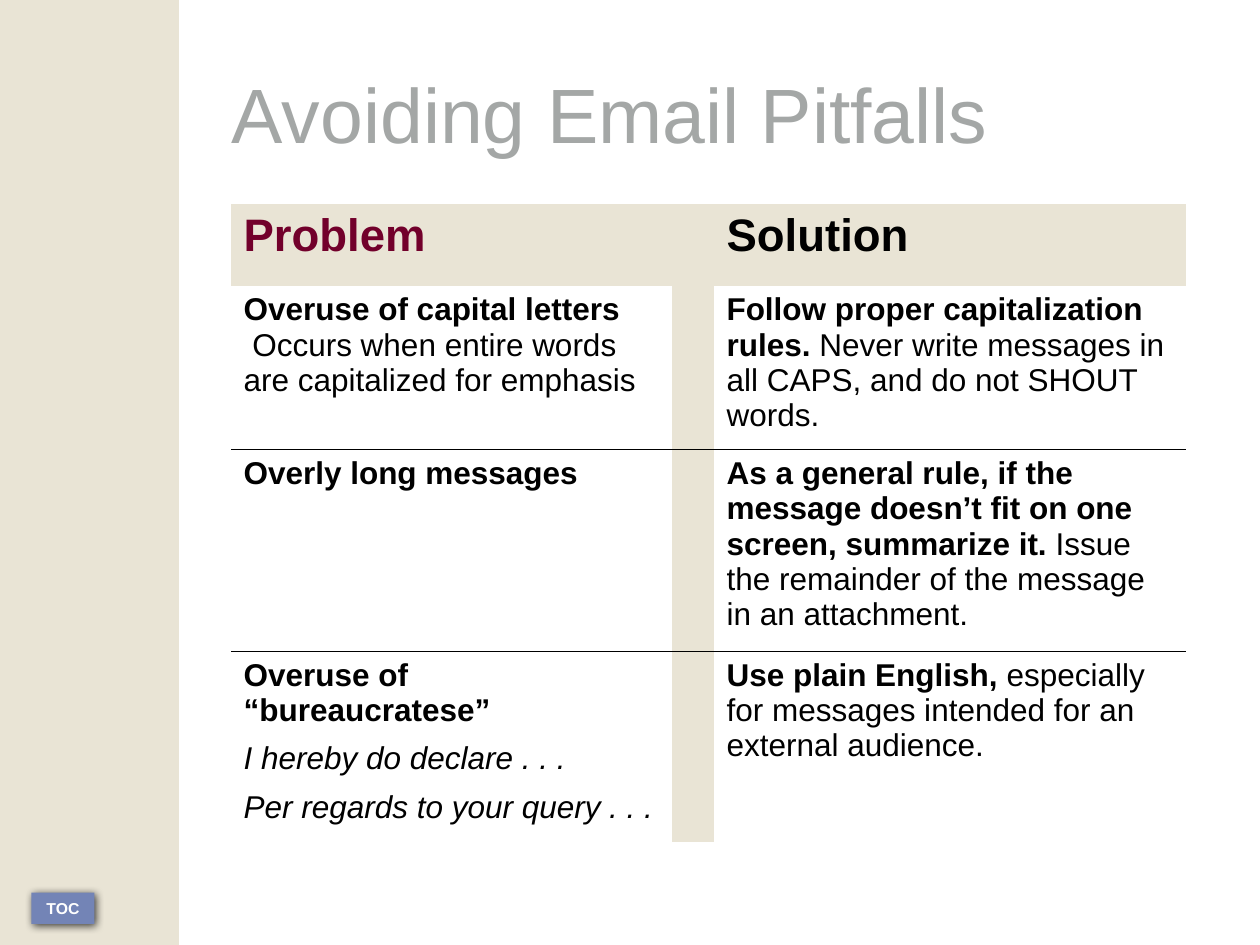
import pptx
import pptx.dml.color
import pptx.enum.shapes
import pptx.enum.text
import pptx.oxml
import pptx.oxml.ns
import pptx.util

Pt = pptx.util.Pt

# Content: a cell is a list of paragraphs, a paragraph a list of (text, style) pieces
TITLE = "Avoiding Email Pitfalls"
BUTTON = "TOC"
HEADINGS = [("Problem", "accent"), ("Solution", "text")]
ROWS = [
    ([[("Overuse of capital letters", "bold"),
       ("\n Occurs when entire words are capitalized for emphasis", "plain")]],
     [[("Follow proper capitalization rules. ", "bold"),
       ("Never write messages in all CAPS, and do not SHOUT words.", "plain")]]),
    ([[("Overly long messages", "bold")]],
     [[("As a general rule, if the message doesn’t fit on one screen, summarize it. ", "bold"),
       ("Issue the remainder of the message in an attachment.", "plain")]]),
    ([[("Overuse of “bureaucratese”", "bold")],
      [("I hereby do declare . . .", "italic")],
      [("Per regards to your query . . .", "italic")]],
     [[("Use plain English, ", "bold"),
       ("especially for messages intended for an external audience.", "plain")]]),
]

THEME = {
    "font": "Arial",
    "colors": {"sand": "E9E4D5", "button": "7384B6", "white": "FFFFFF",
               "title": "A4A7A6", "accent": "72002B", "text": "000000"},
    "sizes": {"title": 44, "heading": 26, "body": 18, "button": 9},
}

# Layout in points
SLIDE_WIDTH, SLIDE_HEIGHT = 720, 540
SIDEBAR_WIDTH = 102.2
TITLE_BOX = (132.5, 48.2, 546, 90)
BUTTON_BOX = (18, 510, 36, 18)
TABLE_LEFT, TABLE_TOP = 132, 116.6
COLUMN_WIDTHS = (252, 24, 270)
ROW_HEIGHTS = (46.8, 93.6, 115.2, 108.8)
SPACE_BEFORE = 7.5


def color(name):
    return pptx.dml.color.RGBColor.from_string(THEME["colors"][name])


def style_run(run, size, color_name, bold=False, italic=False):
    font = run.font
    font.name = THEME["font"]
    font.size = Pt(THEME["sizes"][size])
    font.color.rgb = color(color_name)
    font.bold = bold
    font.italic = italic


def add_rectangle(slide, box, fill):
    shape = slide.shapes.add_shape(
        pptx.enum.shapes.MSO_SHAPE.RECTANGLE, *(Pt(length) for length in box))
    shape.shadow.inherit = False
    shape.fill.solid()
    shape.fill.fore_color.rgb = color(fill)
    shape.line.fill.background()
    return shape


def add_button(slide):
    button = add_rectangle(slide, BUTTON_BOX, "button")
    effects = button._element.spPr.find(pptx.oxml.ns.qn("a:effectLst"))
    effects.append(pptx.oxml.parse_xml(
        f'<a:outerShdw {pptx.oxml.ns.nsdecls("a")} blurRad="{Pt(5)}" dist="{Pt(1.4)}" '
        'dir="2700000" algn="tl" rotWithShape="0"><a:srgbClr val="000000">'
        '<a:alpha val="75000"/></a:srgbClr></a:outerShdw>'))
    frame = button.text_frame
    frame.text = BUTTON
    frame.word_wrap = False
    frame.vertical_anchor = pptx.enum.text.MSO_ANCHOR.MIDDLE
    frame.paragraphs[0].alignment = pptx.enum.text.PP_ALIGN.CENTER
    style_run(frame.paragraphs[0].runs[0], "button", "white", bold=True)


def add_title(slide):
    title = slide.shapes.title
    title.left, title.top, title.width, title.height = (Pt(length) for length in TITLE_BOX)
    frame = title.text_frame
    frame.text = TITLE
    frame.word_wrap = True
    frame.auto_size = pptx.enum.text.MSO_AUTO_SIZE.NONE
    frame.vertical_anchor = pptx.enum.text.MSO_ANCHOR.TOP
    frame.margin_left = frame.margin_right = frame.margin_top = frame.margin_bottom = 0
    paragraph = frame.paragraphs[0]
    paragraph.alignment = pptx.enum.text.PP_ALIGN.LEFT
    paragraph.line_spacing = 0.8
    style_run(paragraph.runs[0], "title", "title")


def fill_cell(cell, paragraphs, size="body", color_name="text"):
    frame = cell.text_frame
    for index, pieces in enumerate(paragraphs):
        paragraph = frame.add_paragraph() if index else frame.paragraphs[0]
        paragraph.space_before = Pt(SPACE_BEFORE)
        for text, style in pieces:
            if text.startswith("\n"):
                paragraph.add_line_break()
            run = paragraph.add_run()
            run.text = text.lstrip("\n")
            style_run(run, size, color_name, style == "bold", style == "italic")


def add_border(cell, side):
    cell._tc.get_or_add_tcPr().append(pptx.oxml.parse_xml(
        f'<a:{side} {pptx.oxml.ns.nsdecls("a")} w="{Pt(1)}"><a:solidFill>'
        f'<a:srgbClr val="{THEME["colors"]["text"]}"/></a:solidFill></a:{side}>'))


def add_pitfall_table(slide):
    frame = slide.shapes.add_table(
        len(ROW_HEIGHTS), len(COLUMN_WIDTHS), Pt(TABLE_LEFT), Pt(TABLE_TOP),
        Pt(sum(COLUMN_WIDTHS)), Pt(sum(ROW_HEIGHTS)))
    table = frame.table
    table.first_row = table.horz_banding = False
    # Plain table style without grid lines
    style_id = table._tbl.tblPr.find(pptx.oxml.ns.qn("a:tableStyleId"))
    style_id.text = "{2D5ABB26-0587-4C30-8999-92F81FD0307C}"
    for column, width in zip(table.columns, COLUMN_WIDTHS):
        column.width = Pt(width)
    for row, height in zip(table.rows, ROW_HEIGHTS):
        row.height = Pt(height)

    # Rules between body rows, sand heading row and middle column
    last = len(ROW_HEIGHTS) - 1
    for row_index, row in enumerate(table.rows):
        for column_index, cell in enumerate(row.cells):
            if row_index > 1:
                add_border(cell, "lnT")
            if 0 < row_index < last:
                add_border(cell, "lnB")
            if row_index == 0 or column_index == 1:
                cell.fill.solid()
                cell.fill.fore_color.rgb = color("sand")
            else:
                cell.fill.background()

    # Text goes in the outer columns
    for column_index, (heading, color_name) in zip((0, 2), HEADINGS):
        fill_cell(table.cell(0, column_index), [[(heading, "bold")]], "heading", color_name)
    for row_index, cells in enumerate(ROWS, start=1):
        for column_index, paragraphs in zip((0, 2), cells):
            fill_cell(table.cell(row_index, column_index), paragraphs)


def main():
    presentation = pptx.Presentation()
    presentation.slide_width = Pt(SLIDE_WIDTH)
    presentation.slide_height = Pt(SLIDE_HEIGHT)
    slide = presentation.slides.add_slide(presentation.slide_layouts.get_by_name("Title Only"))
    add_rectangle(slide, (0, 0, SIDEBAR_WIDTH, SLIDE_HEIGHT), "sand")
    add_button(slide)
    add_title(slide)
    add_pitfall_table(slide)
    presentation.save("out.pptx")


if __name__ == "__main__":
    main()
